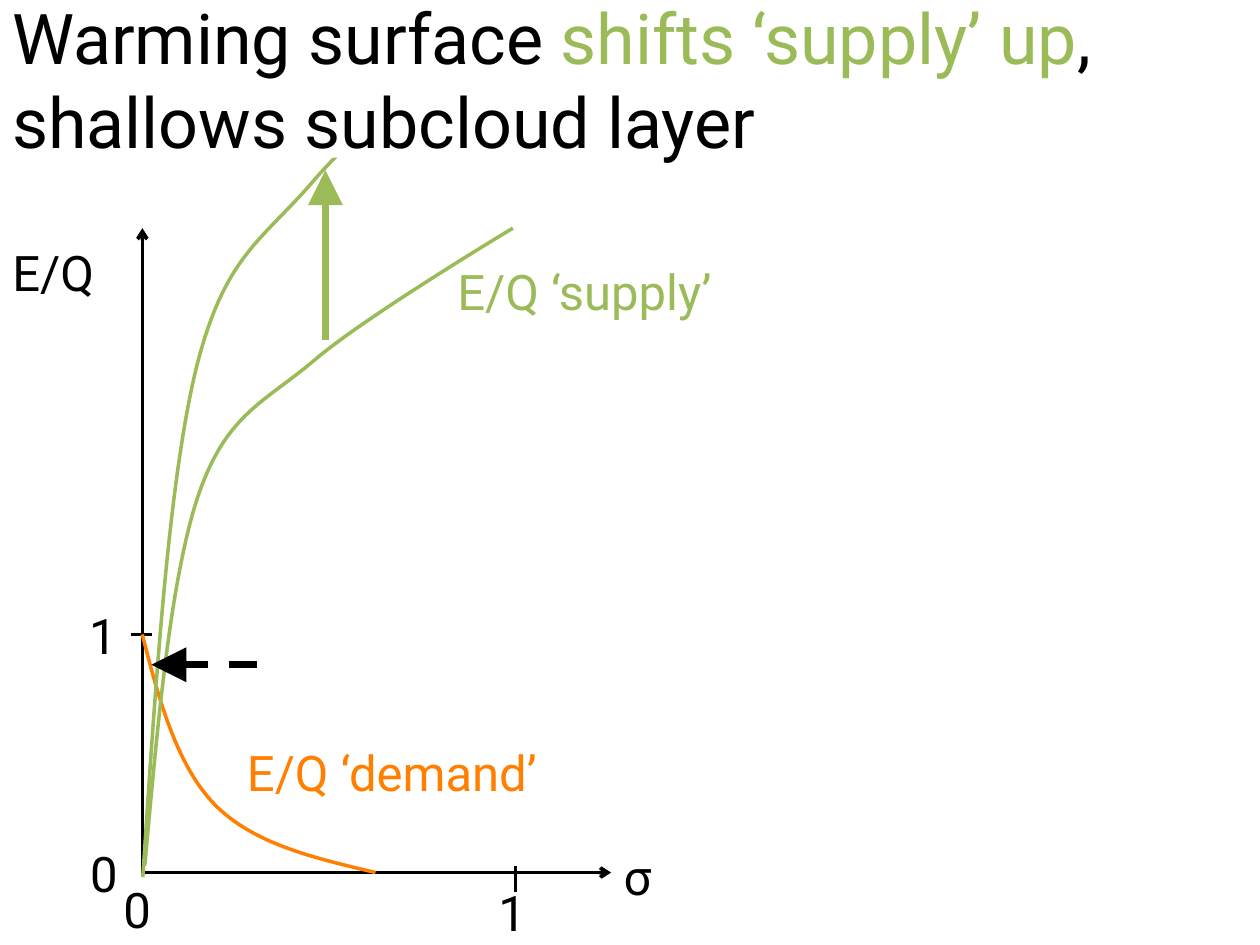
from dataclasses import dataclass
from typing import NamedTuple

from lxml.etree import SubElement
from pptx import Presentation
from pptx.dml.color import RGBColor
from pptx.enum.dml import MSO_LINE
from pptx.enum.shapes import MSO_CONNECTOR, MSO_SHAPE
from pptx.enum.text import MSO_ANCHOR, PP_ALIGN
from pptx.oxml.ns import qn
from pptx.util import Cm, Pt


@dataclass(frozen=True)
class Theme:
    font: str = "Roboto"
    title_size: int = 40
    label_size: int = 28
    ink: str = "000000"
    paper: str = "FFFFFF"
    supply: str = "9BBB59"
    demand: str = "FF8000"
    thin: int = 2
    thick: int = 4


T = Theme()


class Point(NamedTuple):
    x: float
    y: float


class Label(NamedTuple):
    text: str
    left: float
    top: float
    width: float
    color: str = T.ink
    height: float = 1.45


class Line(NamedTuple):
    start: Point
    end: Point
    color: str = T.ink
    width: int = T.thin
    head: str = ""
    head_size: str = "med"
    dashed: bool = False


class Curve(NamedTuple):
    """A chain of cubic Béziers: a start, then three points a segment."""
    points: list[Point]
    color: str


ORIGIN = Point(2.87, 17.59)
ONE_X, ONE_Y = 10.39, 12.79
HANGING = 0.95

LINES = [
    Line(ORIGIN, Point(ORIGIN.x, 4.6), head="arrow"),
    Line(Point(2.92, ORIGIN.y), Point(12.32, ORIGIN.y), head="arrow"),
    Line(Point(2.65, ONE_Y), Point(3.06, ONE_Y)),
    Line(Point(ONE_X, 17.98), Point(ONE_X, 17.45)),
]
SHIFT_ARROWS = [
    Line(Point(6.56, 6.86), Point(6.56, 3.43), T.supply, T.thick,
         "triangle", "lg"),
    Line(Point(5.18, 13.4), Point(3.05, 13.4), T.ink, T.thick,
         "triangle", "lg", True),
]
LABELS = [
    Label("E/Q ‘demand’", 4.73, 14.84, 6.73, T.demand),
    Label("E/Q ‘supply’", 8.97, 5.14, 6.73, T.supply),
    Label("E/Q", 0, 4.77, 2.54),
    Label("1", 1.55, 12.08, 1.09),
    Label("0", 1.57, 16.87, 1.35),
    Label("0", 2.24, 17.6, 1.35, height=1.14),
    Label("1", 9.8, 17.66, 1.65),
    Label("σ", 12.32, 16.94, 2.54),
]
DEMAND = [Point(ORIGIN.x, ONE_Y), Point(3.2, 14.1), Point(3.56, 15.42),
          Point(4.32, 16.21), Point(5.11, 17.02), Point(6.35, 17.3),
          Point(7.57, ORIGIN.y)]
SUPPLY = [Point(2.92, 17.45), Point(3.18, 14.58), Point(3.43, 11.71),
          Point(3.99, 10.01), Point(4.57, 8.31), Point(5.33, 8.13),
          Point(6.4, 7.21), Point(7.47, 6.32), Point(10.34, 4.6),
          Point(10.34, 4.6)]
# Warming stretches the supply curve upwards from its foot.
WARMED = [Point(p.x - 0.04, 17.68 - 1.375 * (SUPPLY[0].y - p.y)) for p in SUPPLY]
CURVES = [Curve(DEMAND, T.demand), Curve(SUPPLY, T.supply), Curve(WARMED, T.supply)]


def rgb(color: str) -> RGBColor:
    return RGBColor.from_string(color)


def set_attrs(obj, values: dict) -> None:
    for name, value in values.items():
        setattr(obj, name, value)


def add_run(p, text: str, size: int, color: str) -> None:
    r = p.add_run()
    r.text = text
    set_attrs(r.font, {"name": T.font, "size": Pt(size)})
    r.font.color.rgb = rgb(color)


def add_label(s, label: Label) -> None:
    sp = s.shapes.add_textbox(Cm(label.left), Cm(label.top),
                              Cm(label.width), Cm(label.height))
    tf = sp.text_frame
    tf.word_wrap = True
    p = tf.paragraphs[0]
    pPr = p._p.get_or_add_pPr()
    pPr.set("marL", str(Cm(HANGING)))
    pPr.set("indent", str(-Cm(HANGING)))
    add_run(p, label.text, T.label_size, label.color)


def add_line(s, line: Line) -> None:
    cx = s.shapes.add_connector(MSO_CONNECTOR.STRAIGHT, *map(Cm, line.start),
                                *map(Cm, line.end))
    cx.line.color.rgb = rgb(line.color)
    cx.line.width = Pt(line.width)
    if line.dashed:
        cx.line.dash_style = MSO_LINE.DASH
    if line.head:
        SubElement(cx.line._get_or_add_ln(), qn("a:tailEnd"), type=line.head,
                   w=line.head_size, len=line.head_size)
    SubElement(cx._element.spPr, qn("a:effectLst"))


def bend(sp) -> None:
    """Turn each three straight segments of a freeform into one cubic Bézier."""
    outline = next(sp._element.iter(qn("a:path")))
    segments = outline.findall(qn("a:lnTo"))
    for i in range(0, len(segments), 3):
        cubic = SubElement(outline, qn("a:cubicBezTo"))
        for segment in segments[i:i + 3]:
            cubic.append(segment[0])
            outline.remove(segment)


def add_curve(s, curve: Curve) -> None:
    start, *rest = [(Cm(p.x), Cm(p.y)) for p in curve.points]
    fb = s.shapes.build_freeform(*start)
    fb.add_line_segments(rest, close=False)
    sp = fb.convert_to_shape()
    bend(sp)
    sp.shadow.inherit = False
    sp.fill.background()
    sp.line.color.rgb = rgb(curve.color)
    sp.line.width = Pt(T.thin)


def add_title(s, runs: list[tuple[str, str]]) -> None:
    sp = s.shapes.add_shape(MSO_SHAPE.RECTANGLE, 0, 0, Cm(25.4), Cm(3.18))
    sp.shadow.inherit = False
    sp.fill.solid()
    sp.fill.fore_color.rgb = rgb(T.paper)
    sp.line.fill.background()
    tf = sp.text_frame
    set_attrs(tf, {"word_wrap": True, "vertical_anchor": MSO_ANCHOR.MIDDLE})
    p = tf.paragraphs[0]
    p.alignment = PP_ALIGN.LEFT
    for text, color in runs:
        add_run(p, text, T.title_size, color)


def main() -> None:
    prs = Presentation()
    set_attrs(prs, {"slide_width": Cm(25.4), "slide_height": Cm(19.05)})
    s = prs.slides.add_slide(prs.slide_layouts[6])
    for draw, items in ((add_line, LINES), (add_label, LABELS),
                        (add_curve, CURVES), (add_line, SHIFT_ARROWS)):
        for item in items:
            draw(s, item)
    add_title(s, [("Warming surface ", T.ink), ("shifts ‘supply’ up", T.supply),
                  (", shallows subcloud layer", T.ink)])
    prs.save("out.pptx")


if __name__ == "__main__":
    main()
